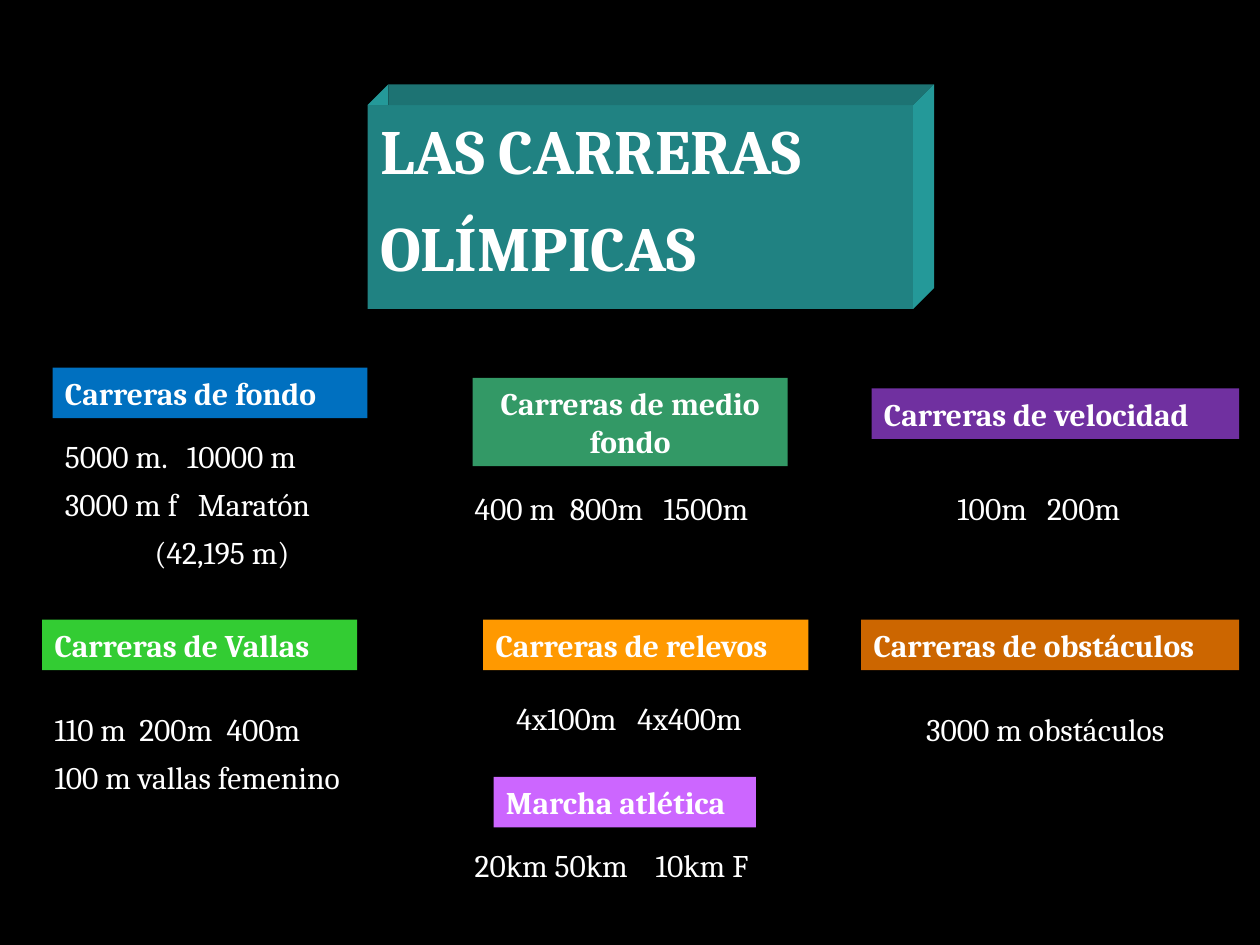
from lxml import etree
from pptx import Presentation
from pptx.dml.color import RGBColor
from pptx.enum.shapes import MSO_SHAPE
from pptx.enum.text import MSO_ANCHOR, MSO_AUTO_SIZE, PP_ALIGN
from pptx.oxml.ns import qn
from pptx.util import Cm, Pt

RECT = MSO_SHAPE.RECTANGLE
TOP = MSO_ANCHOR.TOP
NO_FIT = MSO_AUTO_SIZE.NONE
LEFT, CENTER = PP_ALIGN.LEFT, PP_ALIGN.CENTER
FONT = "Cambria"
COLORS = {
    "background": "000000", "text": "FFFFFF",
    "front": "208282", "top": "1D7373", "side": "249999",
    "fondo": "0070C0", "medio": "339966", "velocidad": "7030A0",
    "vallas": "33CC33", "relevos": "FF9900", "obstaculos": "CC6600",
    "marcha": "CC66FF",
}
LINE_H, LINE_STEP = 1.02, 1.14

RACES = [
    ("fondo", "Carreras de fondo", (1.06, 7.41, 6.35, LINE_H), (0, 1.27, 5.93),
     [("5000 m.\t10000 m", [2.46], 0), ("3000 m f\tMaratón", [2.68], 0),
      ("(42,195 m)", [], 1.81)]),
    ("medio", "Carreras de medio fondo", (9.53, 7.62, 6.35, 1.78), (-0.21, 2.12, 7.2),
     [("400 m\t800m\t1500m", [1.92, 3.81], 0)]),
    ("velocidad", "Carreras de velocidad", (17.57, 7.83, 7.41, LINE_H), (1.48, 1.9, 4.45),
     [("100m\t200m", [1.81], 0)]),
    ("vallas", "Carreras de Vallas", (0.85, 12.49, 6.35, LINE_H), (0, 1.69, 7.2),
     [("110 m\t200m\t400m", [1.71, 3.47], 0), ("100 m vallas femenino", [], 0)]),
    ("relevos", "Carreras de relevos", (9.74, 12.49, 6.56, LINE_H), (0.42, 1.48, 5.72),
     [("4x100m\t4x400m", [2.44], 0)]),
    ("obstaculos", "Carreras de obstáculos", (17.36, 12.49, 7.62, LINE_H),
     (1.06, 1.69, 5.93), [("3000 m obstáculos", [], 0)]),
    ("marcha", "Marcha atlética", (9.95, 15.66, 5.29, LINE_H), (-0.63, 1.27, 7.2),
     [("20km 50km\t10km F", [3.65], 0)]),
]


def paint(sp, color):
    sp.fill.solid()
    sp.fill.fore_color.rgb = RGBColor.from_string(COLORS[color])
    sp.line.fill.background()
    sp.shadow.inherit = False


def write(sp, lines, size, bold=False, align=LEFT):
    tf = sp.text_frame
    tf.text = "\n".join(lines)
    tf.word_wrap = True
    tf.auto_size = NO_FIT
    tf.vertical_anchor = TOP
    for i, p in enumerate(tf.paragraphs):
        p.alignment = align
        p.space_before = Pt(size / 3 if i else 0)
        for r in p.runs:
            r.font.name = FONT
            r.font.size = Pt(size)
            r.font.bold = bold
            r.font.color.rgb = RGBColor.from_string(COLORS["text"])


def set_stops(p, stops, indent):
    pPr = p._p.get_or_add_pPr()
    if indent:
        pPr.set("marL", str(Cm(indent)))
    if stops:
        tabs = etree.SubElement(pPr, qn("a:tabLst"))
        for stop in stops:
            etree.SubElement(tabs, qn("a:tab"), pos=str(Cm(stop)), algn="l")


def add_title(s, box, depth):
    x, y, w, h = box
    sp = s.shapes.title
    sp.left, sp.top, sp.width, sp.height = (Cm(v) for v in box)
    paint(sp, "front")
    write(sp, ["LAS CARRERAS", "OLÍMPICAS"], 36, bold=True)
    right, back = x + w, y - depth
    faces = [
        ("side", [(x, y), (x + depth, back), (x + depth, y)]),
        ("top", [(x, y), (x + depth, y), (x + depth, back), (right + depth, back), (right, y)]),
        ("side", [(right, y), (right + depth, back), (right + depth, back + h), (right, y + h)]),
    ]
    for color, points in faces:
        start, *rest = [(Cm(px), Cm(py)) for px, py in points]
        fb = s.shapes.build_freeform(*start)
        fb.add_line_segments(rest)
        paint(fb.convert_to_shape(), color)


def add_race(s, color, heading, box, body, events):
    x, y, w, h = box
    sp = s.shapes.add_shape(RECT, Cm(x), Cm(y), Cm(w), Cm(h))
    paint(sp, color)
    write(sp, [heading], 18, bold=True, align=CENTER if h > LINE_H else LEFT)
    dx, dy, body_w = body
    body_h = LINE_H + LINE_STEP * (len(events) - 1)
    tb = s.shapes.add_textbox(Cm(x + dx), Cm(y + dy), Cm(body_w), Cm(body_h))
    write(tb, [text for text, _, _ in events], 18)
    for p, (_, stops, indent) in zip(tb.text_frame.paragraphs, events):
        set_stops(p, stops, indent)


def main():
    prs = Presentation()
    prs.slide_width, prs.slide_height = Cm(25.4), Cm(19.05)
    s = prs.slides.add_slide(prs.slide_layouts[5])
    s.background.fill.solid()
    s.background.fill.fore_color.rgb = RGBColor.from_string(COLORS["background"])
    add_title(s, (7.41, 2.12, 11, 4.11), 0.42)
    for race in RACES:
        add_race(s, *race)
    prs.save("out.pptx")


if __name__ == "__main__":
    main()
